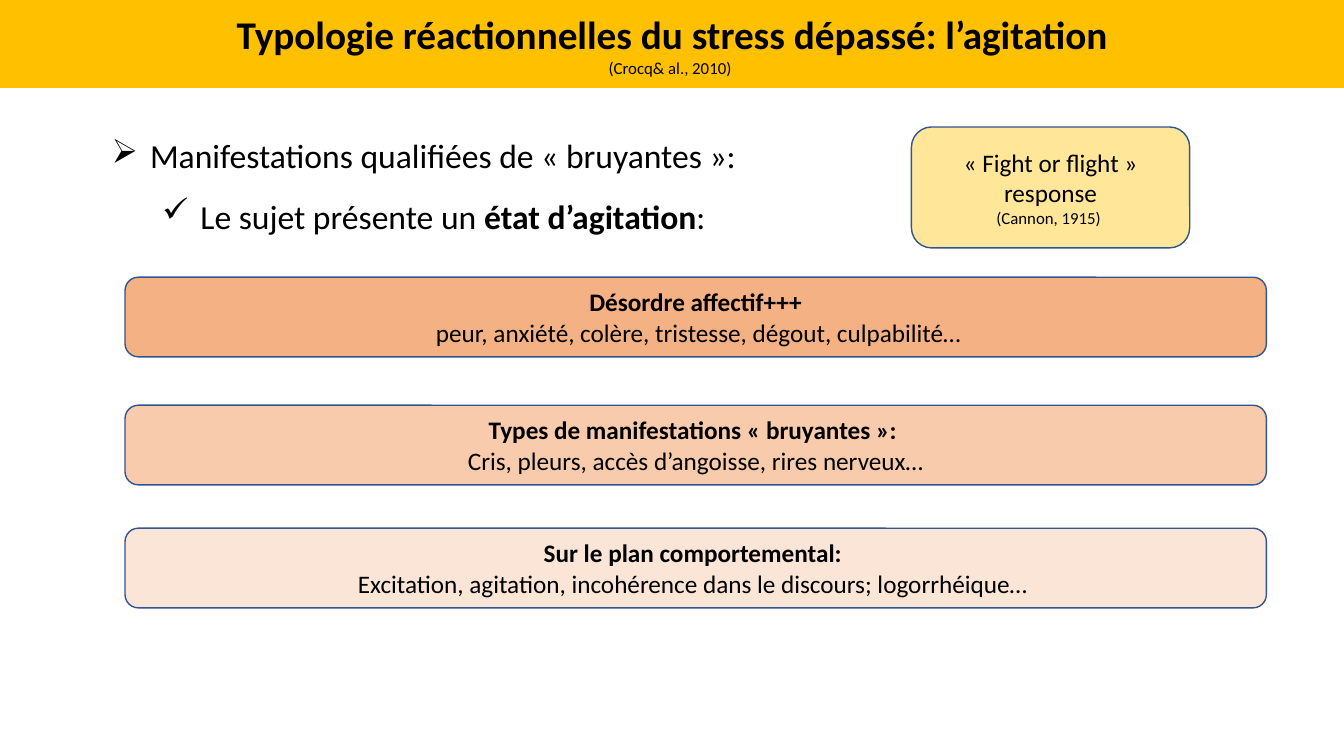
from dataclasses import dataclass

from lxml import etree
from pptx import Presentation
from pptx.dml.color import RGBColor
from pptx.enum.shapes import MSO_SHAPE
from pptx.enum.text import MSO_ANCHOR, MSO_AUTO_SIZE, PP_ALIGN
from pptx.oxml.ns import qn
from pptx.slide import Slide
from pptx.text.text import TextFrame, _Paragraph
from pptx.util import Inches, Pt

ROUNDED = MSO_SHAPE.ROUNDED_RECTANGLE
MIDDLE = MSO_ANCHOR.MIDDLE
CENTER = PP_ALIGN.CENTER
JUSTIFY = PP_ALIGN.JUSTIFY
NO_AUTOFIT = MSO_AUTO_SIZE.NONE

FONT = "Calibri"
BLACK = RGBColor(0x00, 0x00, 0x00)
GOLD = RGBColor(0xFF, 0xC0, 0x00)
PALE_GOLD = RGBColor(0xFF, 0xE6, 0x99)
ORANGE = RGBColor(0xF4, 0xB1, 0x83)
LIGHT_ORANGE = RGBColor(0xF8, 0xCB, 0xAD)
PALE_ORANGE = RGBColor(0xFB, 0xE5, 0xD6)
BORDER = RGBColor(0x32, 0x54, 0x91)

CARD_LEFT, CARD_WIDTH, CARD_HEIGHT = 1.24, 11.32, 0.79


@dataclass(frozen=True)
class Line:
    text: str
    size: int = 18
    bold: bool = False


@dataclass(frozen=True)
class Card:
    left: float
    top: float
    width: float
    height: float
    fill: RGBColor
    lines: tuple[Line, ...]


@dataclass(frozen=True)
class Bullet:
    level: int
    symbol: str
    indent: float
    spans: tuple[tuple[str, bool], ...]


TITLE_LINES = (
    Line("Typologie réactionnelles du stress dépassé: l’agitation", 28, True),
    Line("(Crocq& al., 2010) ", 12),
)

BULLETS = (
    Bullet(1, "➢", 0.88, (("Manifestations qualifiées de « bruyantes »: ", False),)),
    Bullet(2, "✓", 1.38, (
        ("Le sujet présente un ", False),
        ("état d’agitation", True),
        (": ", False),
    )),
)

CARDS = (
    Card(CARD_LEFT, 2.75, CARD_WIDTH, CARD_HEIGHT, ORANGE, (
        Line("Désordre affectif+++", bold=True),
        Line(" peur, anxiété, colère, tristesse, dégout, culpabilité…"),
    )),
    Card(CARD_LEFT, 4.02, CARD_WIDTH, CARD_HEIGHT, LIGHT_ORANGE, (
        Line("Types de manifestations « bruyantes »: ", bold=True),
        Line("Cris, pleurs, accès d’angoisse, rires nerveux…"),
    )),
    Card(CARD_LEFT, 5.24, CARD_WIDTH, CARD_HEIGHT, PALE_ORANGE, (
        Line("Sur le plan comportemental: ", bold=True),
        Line("Excitation, agitation, incohérence dans le discours; logorrhéique… "),
    )),
    Card(9.04, 1.26, 2.76, 1.2, PALE_GOLD, (
        Line("« Fight or flight » response"),
        Line("(Cannon, 1915) ", 12),
    )),
)


def next_paragraph(frame: TextFrame, index: int) -> _Paragraph:
    return frame.add_paragraph() if index else frame.paragraphs[0]


def set_font(para: _Paragraph, size: int) -> None:
    para.font.name = FONT
    para.font.size = Pt(size)
    para.font.color.rgb = BLACK


def write_centered(frame: TextFrame, lines: tuple[Line, ...]) -> None:
    frame.word_wrap = True
    frame.auto_size = NO_AUTOFIT
    frame.vertical_anchor = MIDDLE
    for index, line in enumerate(lines):
        para = next_paragraph(frame, index)
        para.text = line.text
        para.alignment = CENTER
        set_font(para, line.size)
        para.font.bold = line.bold


def add_title(page: Slide, width: int) -> None:
    title = page.shapes.title
    title.left, title.top = Inches(0), Inches(0)
    title.width, title.height = width, Inches(0.87)
    title.fill.solid()
    title.fill.fore_color.rgb = GOLD
    title.line.color.rgb = GOLD
    title.line.width = Pt(1)
    write_centered(title.text_frame, TITLE_LINES)


def add_bullets(page: Slide) -> None:
    box = page.shapes.add_textbox(Inches(0.51), Inches(1.09), Inches(12.04), Inches(3.67))
    frame = box.text_frame
    frame.word_wrap = True
    for index, bullet in enumerate(BULLETS):
        para = next_paragraph(frame, index)
        para.level = bullet.level
        para.alignment = JUSTIFY
        para.line_spacing = 1.5
        set_font(para, 24)
        for text, bold in bullet.spans:
            span = para.add_run()
            span.text = text
            span.font.bold = bold
        properties = para._p.get_or_add_pPr()
        properties.set("marL", str(Inches(bullet.indent)))
        properties.set("indent", str(Inches(-0.38)))
        symbol = etree.Element(qn("a:buChar"), char=bullet.symbol)
        properties.find(qn("a:defRPr")).addprevious(symbol)


def add_card(page: Slide, card: Card) -> None:
    shape = page.shapes.add_shape(
        ROUNDED, Inches(card.left), Inches(card.top), Inches(card.width), Inches(card.height)
    )
    shape.shadow.inherit = False
    shape.fill.solid()
    shape.fill.fore_color.rgb = card.fill
    shape.line.color.rgb = BORDER
    shape.line.width = Pt(1)
    write_centered(shape.text_frame, card.lines)


def main() -> None:
    deck = Presentation()
    deck.slide_width, deck.slide_height = Inches(13.33), Inches(7.5)
    page = deck.slides.add_slide(deck.slide_layouts.get_by_name("Title Only"))
    add_title(page, deck.slide_width)
    add_bullets(page)
    for card in CARDS:
        add_card(page, card)
    deck.save("out.pptx")


if __name__ == "__main__":
    main()
